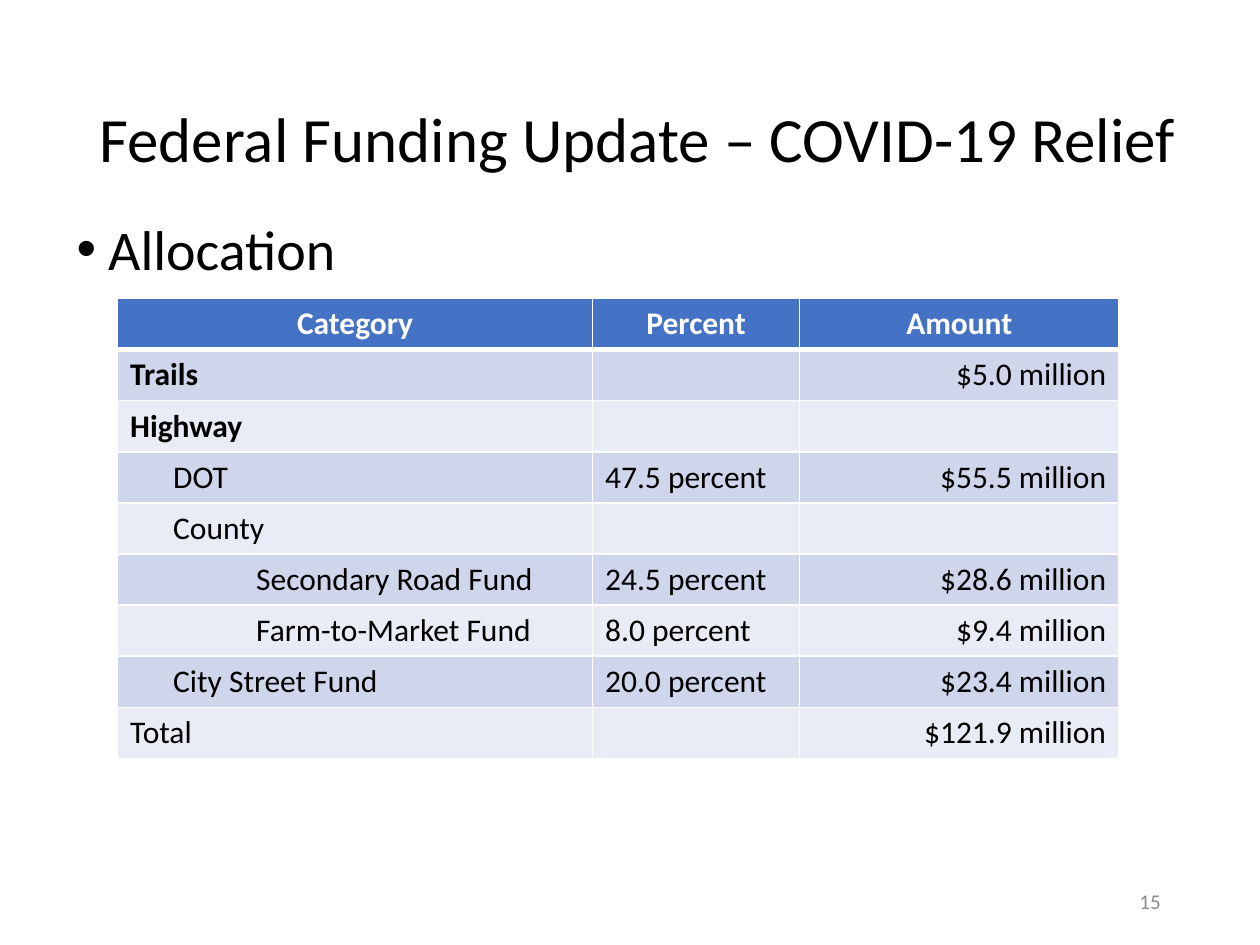
from lxml.etree import SubElement
from pptx import Presentation
from pptx.dml.color import RGBColor
from pptx.enum.text import MSO_ANCHOR, PP_ALIGN
from pptx.oxml.ns import qn
from pptx.util import Pt

FONT = "Calibri"
WHITE = "FFFFFF"
HEADER_FILL = "4472C4"
BAND_FILLS = ["CFD5EA", "E9EBF5"]
COLUMN_WIDTHS = [271.4, 118.4, 182.4]
ROW_HEIGHT = 29.2
CELL_MARGIN = 7.2
INDENTS = [0, 24.6, 72]
HEADINGS = ["Category", "Percent", "Amount"]
ALLOCATIONS = [
    (0, "Trails", "", "$5.0 million"),
    (0, "Highway", "", ""),
    (1, "DOT", "47.5 percent", "$55.5 million"),
    (1, "County", "", ""),
    (2, "Secondary Road Fund", "24.5 percent", "$28.6 million"),
    (2, "Farm-to-Market Fund", "8.0 percent", "$9.4 million"),
    (1, "City Street Fund", "20.0 percent", "$23.4 million"),
    (0, "Total", "", "$121.9 million"),
]
BOLD_CATEGORIES = {"Trails", "Highway"}


def color(value):
    return RGBColor.from_string(value)


def apply_format(target, values):
    for name, value in values.items():
        setattr(target, name, value)


def place(shape, left, top, width, height):
    apply_format(shape, {"left": Pt(left), "top": Pt(top),
                         "width": Pt(width), "height": Pt(height)})


def write_text(text_frame, text, size, text_color="000000", bold=False, **layout):
    paragraph = text_frame.paragraphs[0]
    apply_format(paragraph, layout)
    run = paragraph.add_run()
    run.text = text
    apply_format(run.font, {"name": FONT, "size": Pt(size), "bold": bold})
    run.font.color.rgb = color(text_color)
    return paragraph


def add_title(slide, text):
    title = slide.shapes.title
    place(title, 49.7, 28.8, 633.6, 104.4)
    apply_format(title.text_frame, {"word_wrap": True, "vertical_anchor": MSO_ANCHOR.MIDDLE})
    write_text(title.text_frame, text, 36, alignment=PP_ALIGN.LEFT, line_spacing=0.9)


def add_text(slide, box, text, size, anchor, **layout):
    shape = slide.shapes.add_textbox(*map(Pt, box))
    apply_format(shape.text_frame, {"word_wrap": True, "vertical_anchor": anchor})
    return write_text(shape.text_frame, text, size, **layout)


def add_bullet(paragraph, indent):
    properties = paragraph._p.get_or_add_pPr()
    properties.set("marL", str(Pt(indent)))
    properties.set("indent", str(-Pt(indent)))
    SubElement(properties, qn("a:buFont"), typeface="Arial")
    SubElement(properties, qn("a:buChar"), char="•")


def set_borders(cell, top, bottom):
    properties = cell._tc.get_or_add_tcPr()
    for side, width in {"L": 1, "R": 1, "T": top, "B": bottom}.items():
        line = SubElement(properties, qn(f"a:ln{side}"), w=str(Pt(width)))
        fill = SubElement(line, qn("a:solidFill"))
        SubElement(fill, qn("a:srgbClr"), val=WHITE)


def fill_cell(cell, text, fill, top=1, bottom=1, indent=0, **text_format):
    set_borders(cell, top, bottom)
    cell.fill.solid()
    cell.fill.fore_color.rgb = color(fill)
    cell.margin_left = Pt(CELL_MARGIN + indent)
    if text:
        write_text(cell.text_frame, text, 18, **text_format)


def add_allocation_table(slide):
    row_count = len(ALLOCATIONS) + 1
    table = slide.shapes.add_table(
        row_count, len(HEADINGS), Pt(67.2), Pt(170.6),
        Pt(sum(COLUMN_WIDTHS)), Pt(ROW_HEIGHT * row_count)).table
    for column, width in zip(table.columns, COLUMN_WIDTHS):
        column.width = Pt(width)
    for row in table.rows:
        row.height = Pt(ROW_HEIGHT)
    for column_index, heading in enumerate(HEADINGS):
        fill_cell(table.cell(0, column_index), heading, HEADER_FILL, bottom=3,
                  text_color=WHITE, bold=True, alignment=PP_ALIGN.CENTER)
    alignments = [PP_ALIGN.LEFT, PP_ALIGN.LEFT, PP_ALIGN.RIGHT]
    for row_index, (level, *texts) in enumerate(ALLOCATIONS, 1):
        for column_index, text in enumerate(texts):
            fill_cell(table.cell(row_index, column_index), text,
                      BAND_FILLS[(row_index - 1) % 2],
                      top=3 if row_index == 1 else 1,
                      indent=INDENTS[level] if column_index == 0 else 0,
                      bold=text in BOLD_CATEGORIES,
                      alignment=alignments[column_index])


def main():
    presentation = Presentation()
    apply_format(presentation, {"slide_width": Pt(720), "slide_height": Pt(540)})
    slide = presentation.slides.add_slide(presentation.slide_layouts[5])
    add_title(slide, "Federal Funding Update – COVID-19 Relief")
    allocation = add_text(slide, (36.7, 123.1, 620.6, 377.3), "Allocation", 32,
                          MSO_ANCHOR.TOP, line_spacing=0.9, space_before=Pt(10))
    add_bullet(allocation, 18)
    add_text(slide, (508.3, 500.4, 162, 28.8), "15", 12, MSO_ANCHOR.MIDDLE,
             text_color="8C8C8C", alignment=PP_ALIGN.RIGHT)
    add_allocation_table(slide)
    presentation.save("out.pptx")


if __name__ == "__main__":
    main()
